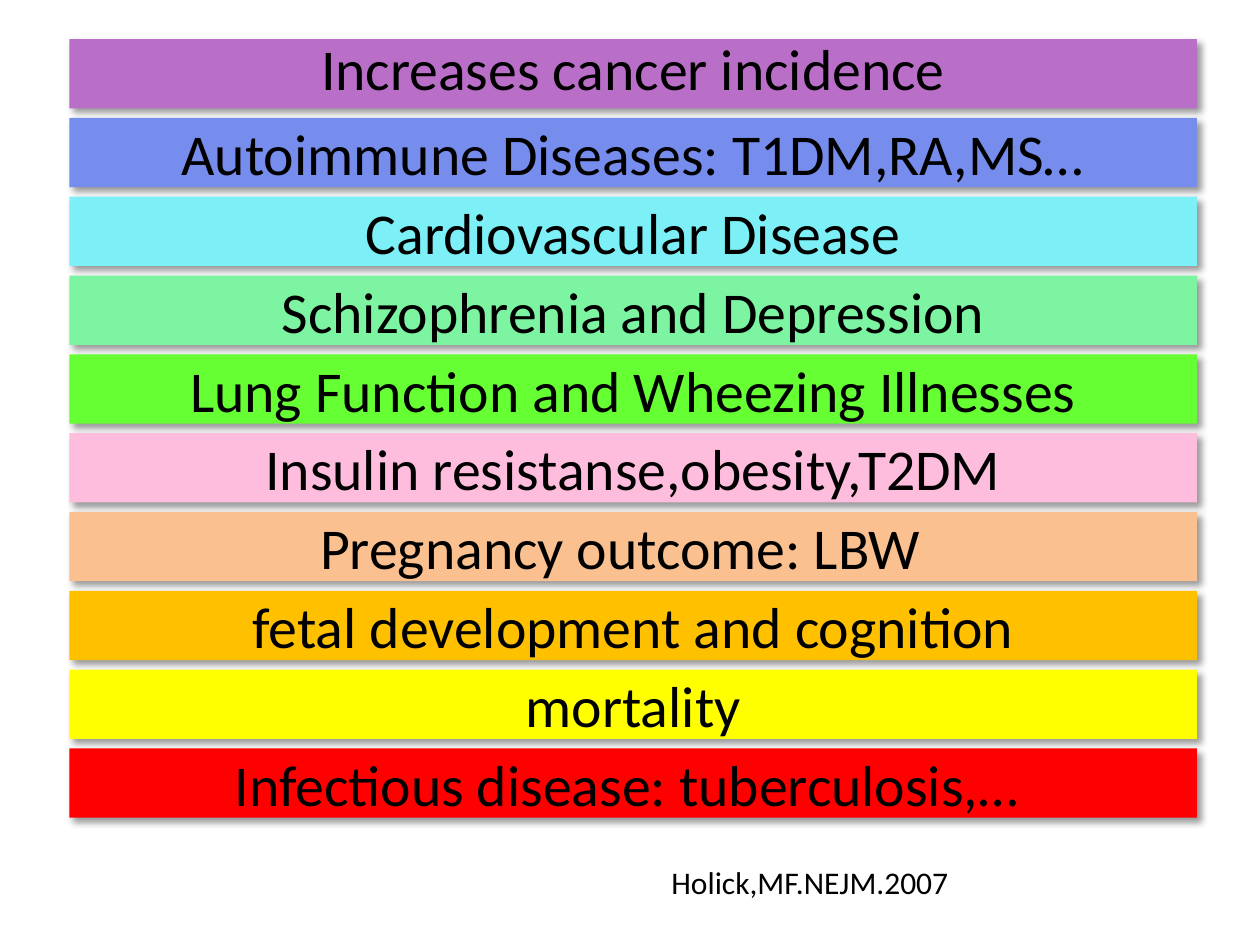
import pptx
import pptx.util
import pptx.dml.color
import pptx.enum.shapes
import pptx.enum.text
import pptx.oxml
import pptx.oxml.ns

Inches = pptx.util.Inches
Pt = pptx.util.Pt
FONT = "Calibri"
COLOURS = {
    "text": "000000",
    "shadow": "000000",
    "purple": "B96EC8",
    "blue": "778DED",
    "cyan": "7CF0F6",
    "mint": "7CF4A1",
    "green": "66FF33",
    "pink": "FFBDDE",
    "peach": "FAC090",
    "orange": "FFC000",
    "yellow": "FFFF00",
    "red": "FF0000",
}
OUTCOMES = [
    ("Increases cancer incidence", "purple", {"line_spacing": 0.8}),
    ("Autoimmune Diseases: T1DM,RA,MS…", "blue", {}),
    ("Cardiovascular Disease", "cyan", {}),
    ("Schizophrenia and Depression", "mint", {}),
    ("Lung Function and Wheezing Illnesses", "green", {}),
    ("Insulin resistanse,obesity,T2DM", "pink", {}),
    ("Pregnancy outcome: LBW", "peach", {"right_inset": 0.3}),
    ("fetal development and cognition", "orange", {}),
    ("mortality", "yellow", {}),
    ("Infectious disease: tuberculosis,…", "red", {"right_inset": 0.2}),
]


def colour(name):
    return pptx.dml.color.RGBColor.from_string(COLOURS[name])


def write_text(box, text, *, size, align=None, anchor=None, line_spacing=None, right_inset=0.1):
    frame = box.text_frame
    frame.word_wrap = True
    frame.margin_right = Inches(right_inset)
    if anchor is not None:
        frame.vertical_anchor = anchor
    para = frame.paragraphs[0]
    para.alignment = align
    para.line_spacing = line_spacing
    span = para.add_run()
    span.text = text
    span.font.name = FONT
    span.font.size = Pt(size)
    span.font.color.rgb = colour("text")


def add_drop_shadow(shape):
    shape.shadow.inherit = False
    effects = shape._element.spPr.find(pptx.oxml.ns.qn("a:effectLst"))
    effects.append(pptx.oxml.parse_xml(
        f'<a:outerShdw {pptx.oxml.ns.nsdecls("a")} blurRad="{Pt(4)}" dist="{Pt(3)}" '
        f'dir="{45 * 60000}" algn="tl" rotWithShape="0">'
        f'<a:srgbClr val="{COLOURS["shadow"]}"><a:alpha val="40000"/></a:srgbClr>'
        '</a:outerShdw>'
    ))


def add_outcome_bars(page, left, top, width, height):
    bar_height = Inches(0.55)
    step = (height - bar_height) / (len(OUTCOMES) - 1)
    for index, (text, fill, text_format) in enumerate(OUTCOMES):
        bar = page.shapes.add_shape(
            pptx.enum.shapes.MSO_SHAPE.RECTANGLE,
            left, round(top + index * step), width, bar_height,
        )
        bar.fill.solid()
        bar.fill.fore_color.rgb = colour(fill)
        bar.line.fill.background()
        add_drop_shadow(bar)
        write_text(
            bar, text, size=33,
            align=pptx.enum.text.PP_ALIGN.CENTER,
            anchor=pptx.enum.text.MSO_ANCHOR.MIDDLE,
            **text_format,
        )


def add_citation(page, left, top, width, height):
    box = page.shapes.add_textbox(left, top, width, height)
    write_text(box, "Holick,MF.NEJM.2007", size=18)
    box.text_frame.auto_size = pptx.enum.text.MSO_AUTO_SIZE.SHAPE_TO_FIT_TEXT


def main():
    deck = pptx.Presentation()
    deck.slide_width = Inches(10)
    deck.slide_height = Inches(7.5)
    page = deck.slides.add_slide(deck.slide_layouts[6])
    add_outcome_bars(page, Inches(0.55), Inches(0.31), Inches(8.95), Inches(6.18))
    add_citation(page, Inches(5.23), Inches(6.8), Inches(4.22), Inches(0.4))
    deck.save("out.pptx")


if __name__ == "__main__":
    main()
